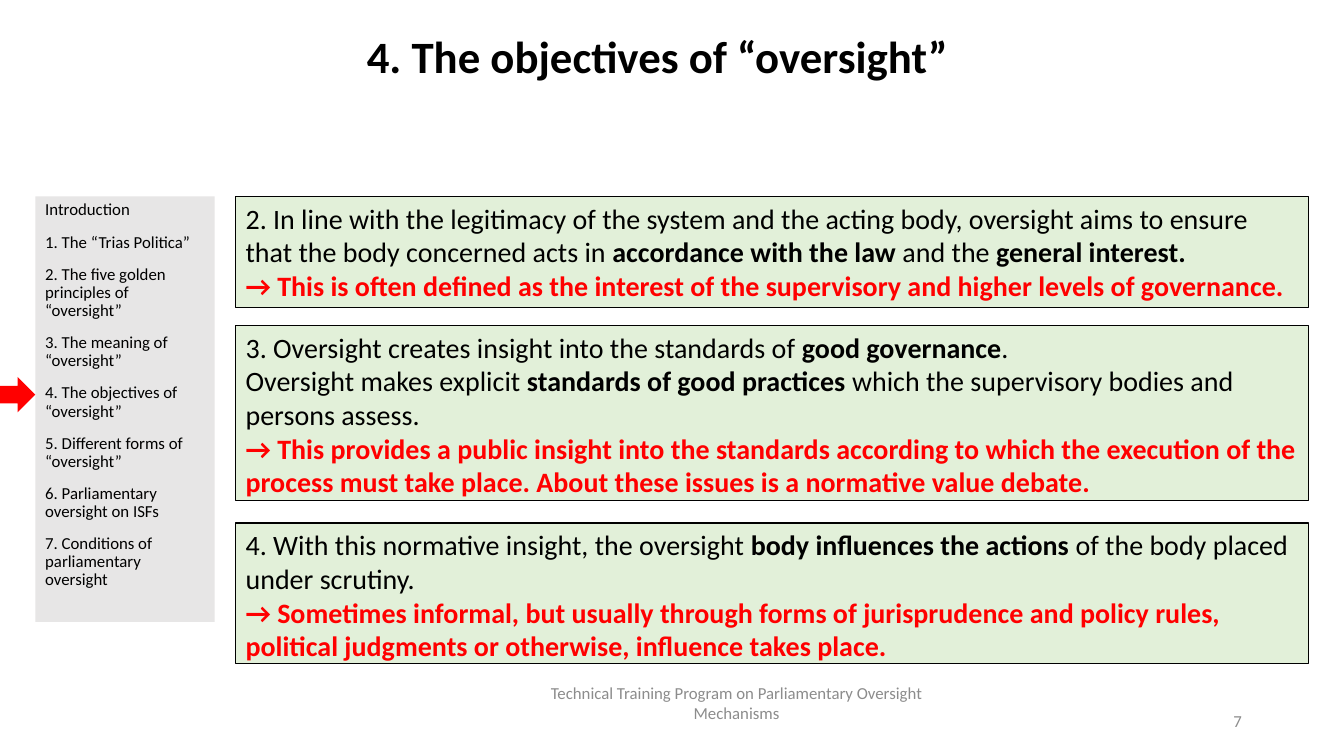
from pptx import Presentation
from pptx.dml.color import RGBColor
from pptx.enum.shapes import MSO_SHAPE
from pptx.enum.text import MSO_ANCHOR, MSO_AUTO_SIZE, PP_ALIGN
from pptx.util import Cm, Pt

RECTANGLE, ARROW = MSO_SHAPE.RECTANGLE, MSO_SHAPE.RIGHT_ARROW
TOP, MIDDLE = MSO_ANCHOR.TOP, MSO_ANCHOR.MIDDLE
LEFT, CENTER, RIGHT = PP_ALIGN.LEFT, PP_ALIGN.CENTER, PP_ALIGN.RIGHT
NO_AUTOFIT = MSO_AUTO_SIZE.NONE

COLORS = {
    "black": "000000",
    "red": "FF0000",
    "gray": "8C8C8C",
    "agenda": "E7E6E6",
    "green": "E2F0D9",
}


def color(name):
    return RGBColor.from_string(COLORS[name])


def write(box, lines, size=12, ink="black", bold=False, align=LEFT,
          anchor=TOP, spacing=1.0, gap=0):
    """Fill a box with paragraphs; ** switches bold, a leading → marks a red bold line."""
    frame = box.text_frame
    frame.word_wrap = True
    frame.auto_size = NO_AUTOFIT
    frame.vertical_anchor = anchor
    for index, line in enumerate(lines):
        para = frame.add_paragraph() if index else frame.paragraphs[0]
        para.alignment = align
        para.line_spacing = spacing
        para.space_before = Pt(gap if index else 0)
        conclusion = line.startswith("→")
        for part, words in enumerate(line.split("**")):
            span = para.add_run()
            span.text = words
            span.font.name = "Calibri"
            span.font.size = Pt(size)
            span.font.bold = bold or conclusion or part % 2 == 1
            span.font.color.rgb = color("red" if conclusion else ink)


deck = Presentation()
deck.slide_width, deck.slide_height = Cm(33.87), Cm(19.05)
page = deck.slides.add_slide(deck.slide_layouts[5])

title = page.shapes.title
title.left, title.top, title.width, title.height = Cm(7.62), Cm(0.76), Cm(17.91), Cm(3.18)
write(title, ["4. The objectives of “oversight”"], size=32, bold=True,
      align=CENTER, spacing=0.9)

# Agenda with the arrow at the current chapter
agenda = page.shapes.add_shape(RECTANGLE, Cm(0.89), Cm(4.95), Cm(4.52), Cm(10.72))
arrow = page.shapes.add_shape(ARROW, Cm(-0.28), Cm(9.5), Cm(1.17), Cm(0.89))
for shape, fill in ((agenda, "agenda"), (arrow, "red")):
    shape.shadow.inherit = False
    shape.fill.solid()
    shape.fill.fore_color.rgb = color(fill)
    shape.line.fill.background()

chapters = [
    "Introduction",
    "1. The “Trias Politica”",
    "2. The five golden principles of “oversight”",
    "3. The meaning of “oversight”",
    "4. The objectives of “oversight”",
    "5. Different forms of “oversight”",
    "6. Parliamentary oversight on ISFs",
    "7. Conditions of parliamentary oversight",
]
write(agenda, chapters, spacing=0.9, gap=10)

# Objectives: top, height, paragraphs
objectives = [
    (4.95, 2.79, [
        "2. In line with the legitimacy of the system and the acting body, oversight aims "
        "to ensure that the body concerned acts in **accordance with the law **and the "
        "**general interest.",
        "→ This is often defined as the interest of the supervisory and higher levels of "
        "governance.",
    ]),
    (8.2, 4.42, [
        "3. Oversight creates insight into the standards of **good governance**.",
        "Oversight makes explicit **standards of good practices **which the supervisory "
        "bodies and persons assess.",
        "→ This provides a public insight into the standards according to which the "
        "execution of the process must take place. About these issues is a normative "
        "value debate.",
    ]),
    (13.18, 3.53, [
        "4. With this normative insight, the oversight **body influences the actions **of "
        "the body placed under scrutiny.",
        "→ Sometimes informal, but usually through forms of jurisprudence and policy "
        "rules, political judgments or otherwise, influence takes place.",
    ]),
]
for top, height, lines in objectives:
    panel = page.shapes.add_shape(RECTANGLE, Cm(5.94), Cm(top), Cm(27.03), Cm(height))
    panel.shadow.inherit = False
    panel.fill.solid()
    panel.fill.fore_color.rgb = color("green")
    panel.line.color.rgb = color("black")
    panel.line.width = Pt(0.75)
    write(panel, lines, size=20)

footer = page.shapes.add_textbox(Cm(12.85), Cm(17.2), Cm(11.43), Cm(1.02))
write(footer, ["Technical Training Program on Parliamentary Oversight Mechanisms"],
      ink="gray", align=CENTER, anchor=MIDDLE)
number = page.shapes.add_textbox(Cm(23.93), Cm(17.65), Cm(7.62), Cm(1.02))
write(number, ["7"], ink="gray", align=RIGHT, anchor=MIDDLE)

deck.save("out.pptx")
